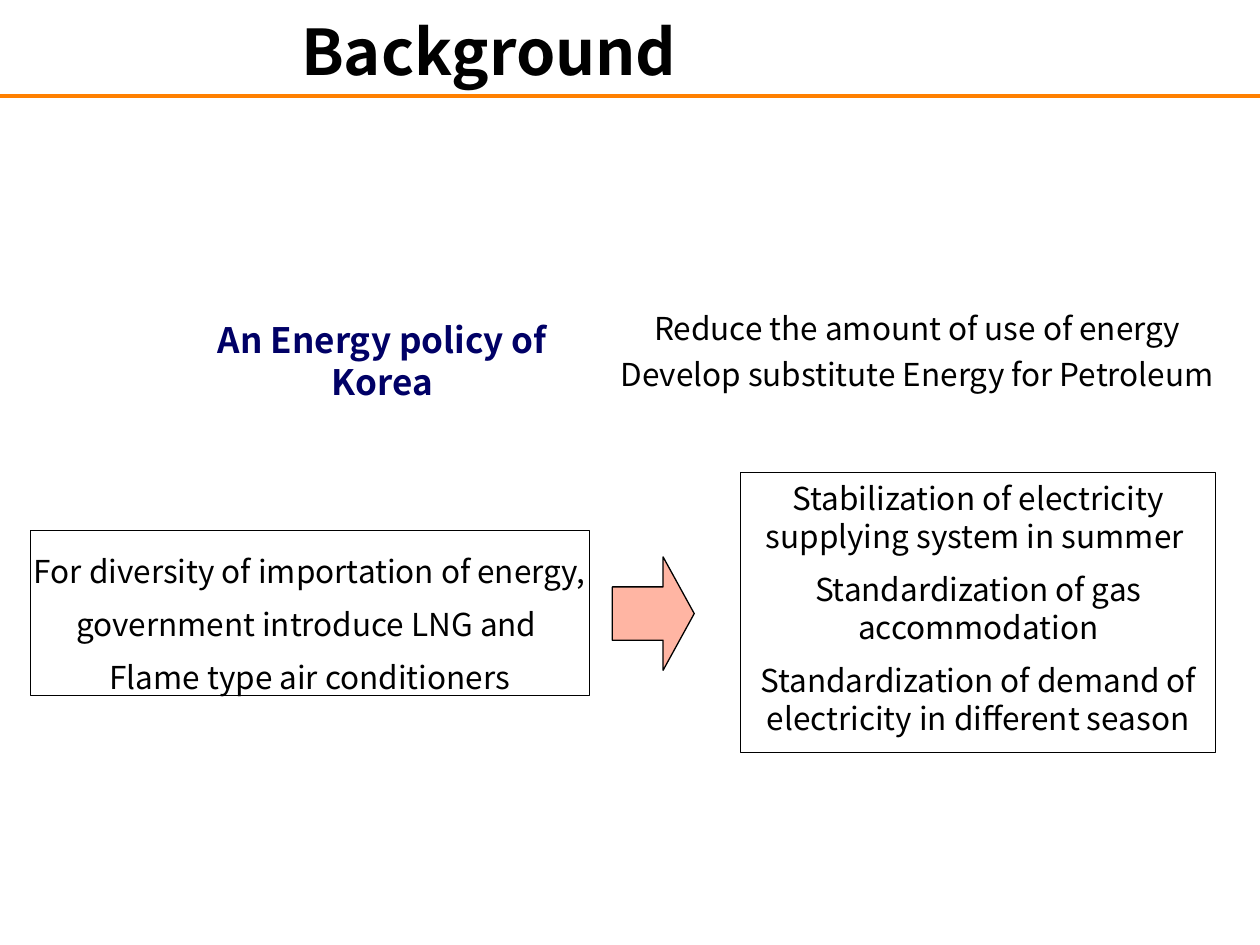
from lxml import etree
from pptx import Presentation
from pptx.dml.color import RGBColor
from pptx.enum import shapes, text
from pptx.oxml import ns
from pptx.util import Inches, Pt


def color(value):
    return RGBColor.from_string(value)


def write(shape, lines, size=18, ink="000000", bold=False, wrap=True, gap=0,
          spacing=(1,), anchor=text.MSO_ANCHOR.TOP, margin=None):
    frame = shape.text_frame
    frame.word_wrap = wrap
    frame.vertical_anchor = anchor
    if margin is not None:
        frame.margin_left = frame.margin_right = Inches(margin)
        frame.margin_top = frame.margin_bottom = Inches(margin)
    for index, line in enumerate(lines):
        para = frame.paragraphs[0] if index == 0 else frame.add_paragraph()
        para.alignment = text.PP_ALIGN.CENTER
        para.line_spacing = spacing[min(index, len(spacing) - 1)]
        para.space_before = Pt(gap if index else 0)
        span = para.add_run()
        span.text = line
        span.font.name = "Noto Sans CJK KR"
        span.font.size = Pt(size)
        span.font.bold = bold
        span.font.color.rgb = color(ink)


deck = Presentation()
deck.slide_width = Inches(10)
deck.slide_height = Inches(7.5)
page = deck.slides.add_slide(deck.slide_layouts[6])

rule = page.shapes.add_connector(
    shapes.MSO_CONNECTOR.STRAIGHT, Inches(0), Inches(0.76), Inches(10), Inches(0.76))
rule.line.color.rgb = color("FF8000")
rule.line.width = Pt(2)
etree.SubElement(rule.element.spPr, ns.qn("a:effectLst"))

policy = page.shapes.add_textbox(Inches(1.21), Inches(2.48), Inches(3.65), Inches(0.77))
write(policy, ["An Energy policy of Korea"], size=20, ink="000066", bold=True)

goals = page.shapes.add_textbox(Inches(4.78), Inches(2.28), Inches(5), Inches(0.95))
write(goals, ["Reduce the amount of use of energy", "Develop substitute Energy for Petroleum"],
      spacing=(1.2,), anchor=text.MSO_ANCHOR.MIDDLE)

outlined = []
for kind, left, top, width, height in [
    (shapes.MSO_SHAPE.RECTANGLE, 0.24, 4.21, 4.44, 1.31),
    (shapes.MSO_SHAPE.RECTANGLE, 5.88, 3.75, 3.77, 2.22),
    (shapes.MSO_SHAPE.RIGHT_ARROW, 4.86, 4.42, 0.65, 0.9),
]:
    shape = page.shapes.add_shape(kind, Inches(left), Inches(top), Inches(width), Inches(height))
    shape.shadow.inherit = False
    shape.fill.background()
    shape.line.color.rgb = color("000000")
    shape.line.width = Pt(0.75)
    outlined.append(shape)
measure, effects, arrow = outlined

write(measure, ["For diversity of importation of energy,", "government introduce LNG and ",
                "Flame type air conditioners"],
      wrap=False, spacing=(1.5, 1.4), anchor=text.MSO_ANCHOR.BOTTOM, margin=0)
write(effects, ["Stabilization of electricity supplying system in summer ",
                "Standardization of gas accommodation",
                "Standardization of demand of electricity in different season"], gap=9)

arrow.fill.solid()
arrow.fill.fore_color.rgb = color("FFB5A3")
arrow.adjustments[0] = 0.47
arrow.adjustments[1] = 0.38

title = page.shapes.add_textbox(Inches(0), Inches(0), Inches(7.76), Inches(0.79))
write(title, ["Background"], size=36, bold=True, anchor=text.MSO_ANCHOR.MIDDLE)

deck.save("out.pptx")
